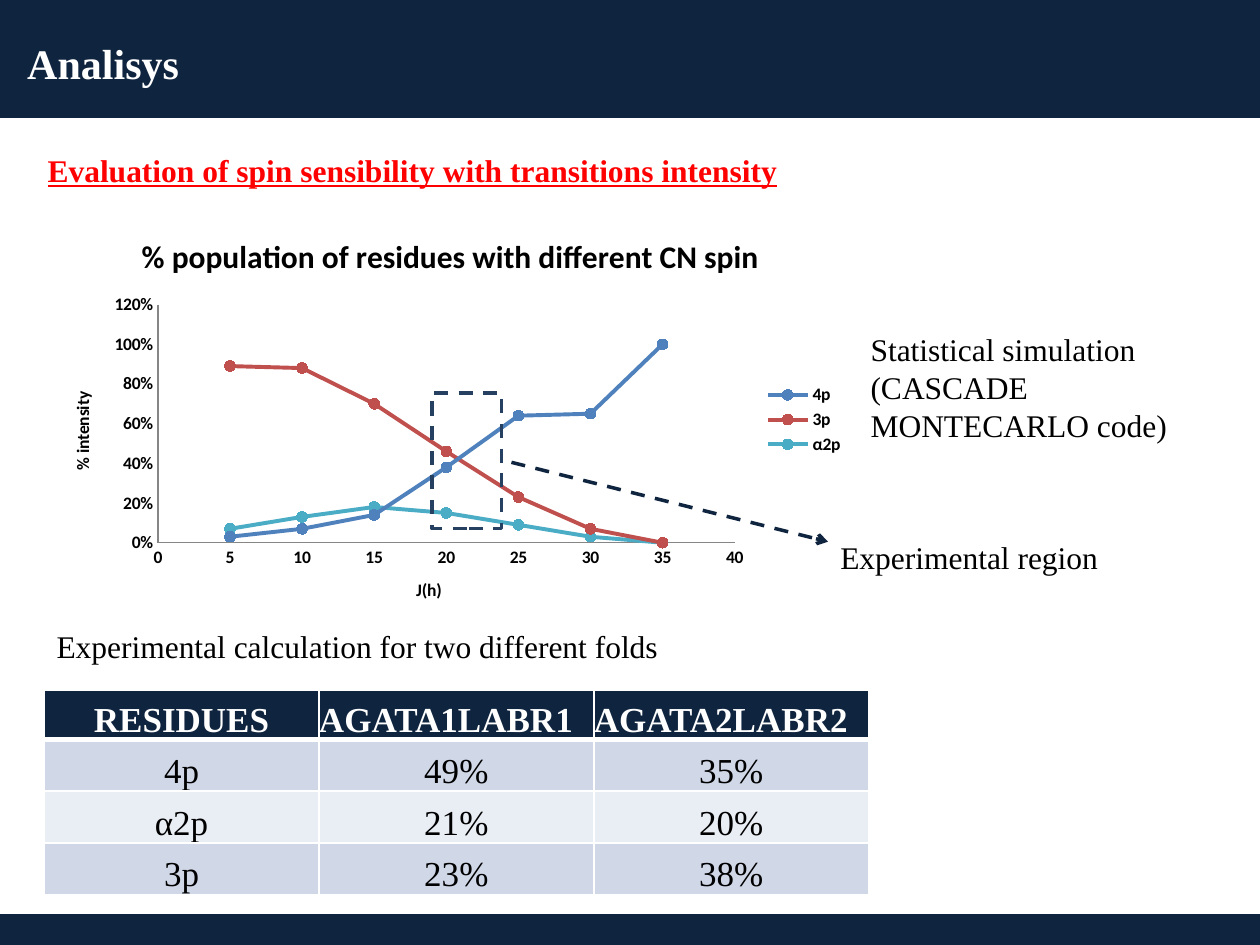
from lxml.etree import SubElement
from pptx import Presentation
from pptx.chart.data import XyChartData
from pptx.dml.color import RGBColor
from pptx.enum.chart import XL_CHART_TYPE, XL_LEGEND_POSITION, XL_MARKER_STYLE, XL_TICK_MARK
from pptx.enum.dml import MSO_LINE
from pptx.enum.shapes import MSO_CONNECTOR, MSO_SHAPE
from pptx.enum.text import MSO_ANCHOR, MSO_AUTO_SIZE, PP_ALIGN
from pptx.oxml import parse_xml
from pptx.oxml.ns import nsdecls, qn
from pptx.util import Cm, Pt

COLOURS = {
    "navy": "0F243E", "frame": "254061", "white": "FFFFFF", "black": "000000",
    "red": "FF0000", "band": "D0D8E8", "pale": "E9EDF4", "axis": "868686",
    "4p": "4F81BD", "3p": "C0504D", "α2p": "4BACC6",
}
SPINS = range(5, 40, 5)
POPULATIONS = {
    "4p": (0.03, 0.07, 0.14, 0.38, 0.64, 0.65, 1),
    "3p": (0.89, 0.88, 0.7, 0.46, 0.23, 0.07, 0),
    "α2p": (0.07, 0.13, 0.18, 0.15, 0.09, 0.03, 0),
}
RESIDUES = (
    ("RESIDUES", "AGATA1LABR1", "AGATA2LABR2"),
    ("4p", "49%", "35%"),
    ("α2p", "21%", "20%"),
    ("3p", "23%", "38%"),
)


class SlideBuilder:
    """Draws styled elements on the current slide, with lengths in centimetres."""

    body_font = "Times New Roman"
    chart_font = "Calibri"

    def __init__(self, page):
        self.page = page

    def colour(self, name):
        return RGBColor.from_string(COLOURS[name])

    def apply(self, target, values):
        for name, value in values.items():
            setattr(target, name, value)

    def font(self, font, colour="black", **values):
        self.apply(font, {"name": self.body_font, **values})
        font.color.rgb = self.colour(colour)

    def line(self, line, colour, width, dash=None):
        line.color.rgb = self.colour(colour)
        self.apply(line, {"width": Pt(width), "dash_style": dash})

    def rectangle(self, place, fill, colour, width, dash=None):
        shape = self.page.shapes.add_shape(MSO_SHAPE.RECTANGLE, *map(Cm, place))
        shape.shadow.inherit = False
        if fill:
            shape.fill.solid()
            shape.fill.fore_color.rgb = self.colour(fill)
        else:
            shape.fill.background()
        self.line(shape.line, colour, width, dash)

    def text(self, place, words, colour="black", size=18, **values):
        box = self.page.shapes.add_textbox(*map(Cm, place))
        self.apply(box.text_frame, {"word_wrap": True, "auto_size": MSO_AUTO_SIZE.SHAPE_TO_FIT_TEXT})
        span = box.text_frame.paragraphs[0].add_run()
        span.text = words
        self.font(span.font, colour, size=Pt(size), **values)

    def arrow(self, start, end, colour, width):
        connector = self.page.shapes.add_connector(MSO_CONNECTOR.STRAIGHT, *map(Cm, start + end))
        self.line(connector.line, colour, width, MSO_LINE.DASH)
        SubElement(connector.line._get_or_add_ln(), qn("a:tailEnd"), type="arrow")
        SubElement(connector._element.spPr, qn("a:effectLst"))

    def borders(self, cell, widths):
        properties = cell._tc.get_or_add_tcPr()
        for index, (side, width) in enumerate(widths.items()):
            properties.insert(index, parse_xml(
                f'<a:ln{side} {nsdecls("a")} w="{Pt(width)}"><a:solidFill>'
                f'<a:srgbClr val="{COLOURS["white"]}"/></a:solidFill></a:ln{side}>'))

    def table(self, left, top, column_width, row_heights, rows):
        width = column_width * len(rows[0])
        frame = self.page.shapes.add_table(
            len(rows), len(rows[0]), *map(Cm, (left, top, width, sum(row_heights))))
        for column in frame.table.columns:
            column.width = Cm(column_width)
        for row, height in zip(frame.table.rows, row_heights):
            row.height = Cm(height)
        margins = {f"margin_{side}": 0 for side in ("left", "top", "right", "bottom")}
        for i, words in enumerate(rows):
            fill = "navy" if i == 0 else ("pale", "band")[i % 2]
            for j, word in enumerate(words):
                cell = frame.table.cell(i, j)
                self.apply(cell, {"text": word, "vertical_anchor": MSO_ANCHOR.BOTTOM, **margins})
                cell.fill.solid()
                cell.fill.fore_color.rgb = self.colour(fill)
                para = cell.text_frame.paragraphs[0]
                para.alignment = PP_ALIGN.LEFT if i == 0 and j else PP_ALIGN.CENTER
                self.font(para.runs[0].font, "black" if i else "white", size=Pt(20), bold=i == 0)
                self.borders(cell, {"L": 1, "R": 1, "T": 3 if i == 1 else 1, "B": 1 if i else 3})

    def chart_title(self, owner, words, size):
        frame = getattr(owner, "chart_title", None) or owner.axis_title
        span = frame.text_frame.paragraphs[0].add_run()
        span.text = words
        self.font(span.font, name=self.chart_font, size=Pt(size), bold=True)

    def axis(self, axis, title, maximum, step, number_format):
        self.apply(axis, {
            "minimum_scale": 0, "maximum_scale": maximum, "major_unit": step,
            "has_major_gridlines": False, "has_title": True,
            "major_tick_mark": XL_TICK_MARK.NONE, "minor_tick_mark": XL_TICK_MARK.NONE})
        self.apply(axis.tick_labels, {"number_format": number_format, "number_format_is_linked": False})
        self.font(axis.tick_labels.font, name=self.chart_font, size=Pt(10), bold=True)
        self.line(axis.format.line, "axis", 0.75)
        self.chart_title(axis, title, 10)

    def chart(self, place, title, xs, series_values, layout):
        data = XyChartData()
        for name, values in series_values.items():
            series = data.add_series(name, number_format="0%")
            for x, y in zip(xs, values):
                series.add_data_point(x, y)
        chart = self.page.shapes.add_chart(
            XL_CHART_TYPE.XY_SCATTER_LINES, *map(Cm, place), data).chart
        self.font(chart.font, name=self.chart_font, size=Pt(10))
        self.apply(chart, {"has_title": True, "has_legend": True})
        self.chart_title(chart, title, 18)
        self.apply(chart.legend, {"position": XL_LEGEND_POSITION.RIGHT, "include_in_layout": False})
        self.font(chart.legend.font, name=self.chart_font, size=Pt(10), bold=True)
        self.axis(chart.category_axis, "J(h)", 40, 5, "0")
        self.axis(chart.value_axis, "% intensity", 1.2, 0.2, "0%")
        plot = chart.plots[0]
        plot.vary_by_categories = False
        for series in plot.series:
            series.smooth = False
            self.line(series.format.line, series.name, 2.25)
            self.apply(series.marker, {"style": XL_MARKER_STYLE.CIRCLE, "size": 6})
            series.marker.format.fill.solid()
            series.marker.format.fill.fore_color.rgb = self.colour(series.name)
            self.line(series.marker.format.line, series.name, 0.75)
        area = chart._chartSpace.chart.plotArea
        for old in area.findall(qn("c:layout")):
            area.remove(old)
        sizes = "".join(f'<c:{key} val="{value}"/>' for key, value in layout.items())
        area.insert(0, parse_xml(
            f'<c:layout {nsdecls("c")}><c:manualLayout><c:layoutTarget val="inner"/>'
            f'<c:xMode val="edge"/><c:yMode val="edge"/>{sizes}</c:manualLayout></c:layout>'))


def main():
    deck = Presentation()
    deck.slide_width, deck.slide_height = Cm(25.4), Cm(19.05)
    page = deck.slides.add_slide(deck.slide_layouts[6])
    builder = SlideBuilder(page)
    builder.rectangle((0, 0, 25.4, 2.34), "navy", "navy", 2)
    builder.text((0.3, 0.64, 21.41, 1.27), "Analisys", "white", 24, bold=True)
    builder.rectangle((0, 18.44, 25.4, 0.69), "navy", "navy", 0.75)
    builder.table(0.89, 13.92, 5.54, (0.99, 1.04, 1.04, 1.04), RESIDUES)
    builder.chart((0.89, 4.32, 16.38, 8.28), "% population of residues with different CN spin",
                  SPINS, POPULATIONS, {"x": 0.14, "y": 0.22, "w": 0.71, "h": 0.58})
    builder.text((17.3, 6.53, 6.81, 2.57), "Statistical simulation (CASCADE MONTECARLO code)")
    builder.text((0.89, 12.52, 17.4, 1.02), "Experimental calculation for two different folds")
    builder.text((0.71, 2.92, 22.81, 1.02), "Evaluation of spin sensibility with transitions intensity",
                 "red", bold=True, underline=True)
    builder.rectangle((8.71, 7.92, 1.4, 2.74), None, "frame", 2, MSO_LINE.DASH)
    builder.arrow((10.31, 9.32), (16.69, 10.92), "navy", 2)
    builder.text((16.69, 10.72, 6.2, 1.02), "Experimental region")
    deck.save("out.pptx")


if __name__ == "__main__":
    main()
